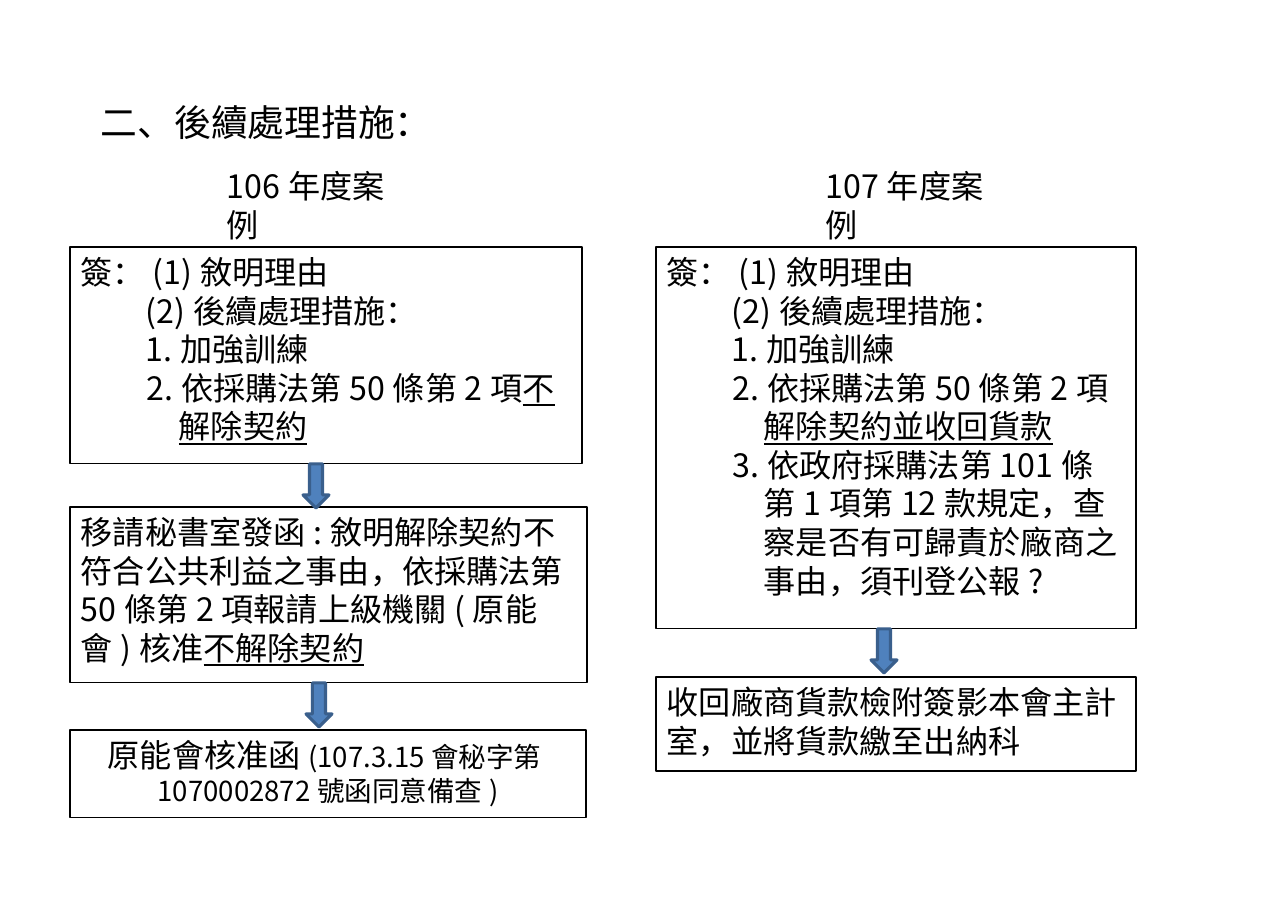
import pptx
import pptx.util
import pptx.dml.color
import pptx.enum.shapes
import pptx.enum.text
import pptx.oxml.ns
import lxml.etree

FONT = "Noto Sans CJK SC"
BODY, SMALL, HEADING = 21, 18, 24
PX = 8298  # EMU per px

# Content: a paragraph is (runs, left indent, hanging indent); a run is (text, format)
TITLE = "二、後續處理措施："
UNDER = {"underline": True}
SIGN_OFF = [
    ([("簽：(1)敘明理由", {})], 0, 0),
    ([("(2)後續處理措施：", {})], 65, 0),
    ([("1.加強訓練", {})], 65, 0),
]
CASE_106 = SIGN_OFF + [
    ([("2.依採購法第50條第2項", {}), ("不解除契約", UNDER)], 98, 32),
]
CASE_107 = SIGN_OFF + [
    ([("2.依採購法第50條第2項", {}), ("解除契約並收回貨款", UNDER)], 97, 31),
    ([("3.依政府採購法第101條第1項第12款規定，查察是否有可歸責於廠商之事由，須刊登公報?", {})], 97, 31),
]
LETTER = [([
    ("移請秘書室發函:敘明解除契約不符合公共利益之事由，依採購法第50條第2項報請上級機關(原能會)核准", {}),
    ("不解除契約", UNDER)], 0, 0)]
APPROVAL = [([
    ("原能會核准函", {}),
    ("(107.3.15會秘字第1070002872號函同意備查)", {"size": SMALL})], 0, 0)]
REFUND = [([("收回廠商貨款檢附簽影本會主計室，並將貨款繳至出納科", {})], 0, 0)]

# Columns: label, label left and width, column left, steps, arrow lefts
# A step is (top, width, height, paragraphs, centred)
COLUMNS = [
    ("106年度案例", 216, 199, 70, [
        (247, 512, 217, CASE_106, False),
        (507, 517, 176, LETTER, False),
        (730, 516, 88, APPROVAL, True)], [303, 306]),
    ("107年度案例", 815, 204, 656, [
        (247, 480, 382, CASE_107, False),
        (677, 480, 94, REFUND, False)], [871]),
]
LABEL_TOP, LABEL_H = 161, 53
ARROW_W, ARROW_H = 26, 44


def px(n):
    return pptx.util.Emu(n * PX)


def color(value):
    return pptx.dml.color.RGBColor.from_string(value)


def add_run(p, text, size=BODY, underline=None):
    r = p.add_run()
    r.text = text
    r.font.name = FONT
    r.font.size = pptx.util.Pt(size)
    r.font.color.rgb = color("000000")
    r.font.underline = underline
    ea = lxml.etree.SubElement(r._r.rPr, pptx.oxml.ns.qn("a:ea"))
    ea.set("typeface", FONT)


def add_box(slide, left, top, width, height, paragraphs, centred=False, border=True):
    sp = slide.shapes.add_textbox(px(left), px(top), px(width), px(height))
    if border:
        sp.line.color.rgb = color("000000")
        sp.line.width = pptx.util.Pt(0.75)
    tf = sp.text_frame
    tf.word_wrap = True
    for i, (runs, indent, hanging) in enumerate(paragraphs):
        p = tf.add_paragraph() if i else tf.paragraphs[0]
        if centred:
            p.alignment = pptx.enum.text.PP_ALIGN.CENTER
        if indent:
            pPr = p._p.get_or_add_pPr()
            pPr.set("marL", str(px(indent)))
            pPr.set("indent", str(px(-hanging)))
        for text, fmt in runs:
            add_run(p, text, **fmt)


def add_arrow(slide, left, top):
    sp = slide.shapes.add_shape(pptx.enum.shapes.MSO_SHAPE.DOWN_ARROW,
                                px(left), px(top), px(ARROW_W), px(ARROW_H))
    sp.shadow.inherit = False
    sp.fill.solid()
    sp.fill.fore_color.rgb = color("4F81BD")
    sp.line.color.rgb = color("3A5F8C")
    sp.line.width = pptx.util.Pt(2)


def main():
    prs = pptx.Presentation()
    prs.slide_width, prs.slide_height = px(1288), px(911)
    slide = prs.slides.add_slide(prs.slide_layouts[5])

    # Title
    title = slide.shapes.title
    title.left, title.top, title.width, title.height = px(89), px(83), px(365), px(78)
    tf = title.text_frame
    tf.auto_size = pptx.enum.text.MSO_AUTO_SIZE.NONE
    tf.vertical_anchor = pptx.enum.text.MSO_ANCHOR.MIDDLE
    tf.margin_left = tf.margin_right = px(12)
    p = tf.paragraphs[0]
    p.alignment = pptx.enum.text.PP_ALIGN.LEFT
    add_run(p, TITLE, size=HEADING)

    # Case columns: each arrow starts at the bottom of the step above it
    for label, label_left, label_w, left, steps, arrows in COLUMNS:
        add_box(slide, label_left, LABEL_TOP, label_w, LABEL_H,
                [([(label, {})], 0, 0)], border=False)
        for top, width, height, paragraphs, centred in steps:
            add_box(slide, left, top, width, height, paragraphs, centred)
        for arrow_left, (top, _, height, _, _) in zip(arrows, steps):
            add_arrow(slide, arrow_left, top + height)

    prs.save("out.pptx")


if __name__ == "__main__":
    main()
